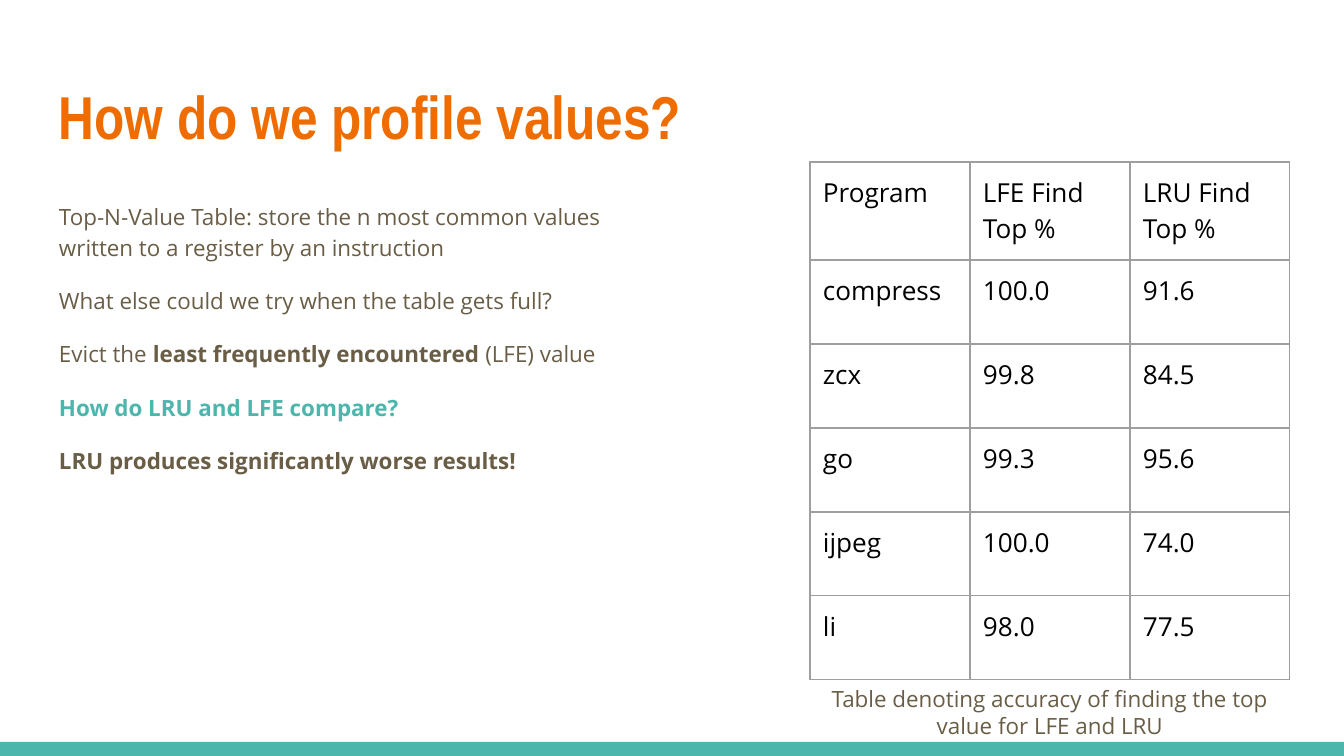
from dataclasses import dataclass

from lxml.etree import SubElement
from pptx import Presentation
from pptx.dml.color import RGBColor
from pptx.enum.shapes import MSO_SHAPE
from pptx.enum.text import MSO_ANCHOR, PP_ALIGN
from pptx.oxml.ns import qn
from pptx.util import Emu, Pt

SLIDE_WIDTH, SLIDE_HEIGHT = 1344, 756
EMU_PER_PX = 9144000 / SLIDE_WIDTH
INSET = 13

ORANGE = RGBColor(0xEF, 0x6C, 0x00)
TEAL = RGBColor(0x4D, 0xB6, 0xAC)
BROWN = RGBColor(0x69, 0x5D, 0x46)
BLACK = RGBColor(0x00, 0x00, 0x00)
GREY = RGBColor(0x9E, 0x9E, 0x9E)


def px(length: int) -> Emu:
    return Emu(round(length * EMU_PER_PX))


@dataclass(frozen=True)
class Box:
    left: int
    top: int
    width: int
    height: int

    def emu(self) -> tuple:
        return px(self.left), px(self.top), px(self.width), px(self.height)


@dataclass(frozen=True)
class Words:
    text: str
    size: float = 12
    color: RGBColor = BROWN
    bold: bool = False
    font: str = "Open Sans"


TITLE = [[Words("How do we profile values?", 32.4, ORANGE, True, "Arial Narrow")]]
POINTS = [
    [Words("Top-N-Value Table: store the n most common values written to a register by an instruction")],
    [Words("What else could we try when the table gets full?")],
    [Words("Evict the "), Words("least frequently encountered", bold=True), Words(" (LFE) value")],
    [Words("How do LRU and LFE compare?", color=TEAL, bold=True)],
    [Words("LRU produces significantly worse results!", bold=True)],
]
CAPTION = [[Words("Table denoting accuracy of finding the top value for LFE and LRU")]]
ACCURACY = [
    ("Program", "LFE Find Top %", "LRU Find Top %"),
    ("compress", "100.0", "91.6"),
    ("zcx", "99.8", "84.5"),
    ("go", "99.3", "95.6"),
    ("ijpeg", "100.0", "74.0"),
    ("li", "98.0", "77.5"),
]
COLUMN_WIDTH, HEADER_HEIGHT, ROW_HEIGHT = 160, 98, 84


def add_words(paragraph, words: Words) -> None:
    run = paragraph.add_run()
    run.text = words.text
    run.font.name = words.font
    run.font.size = Pt(words.size)
    run.font.bold = words.bold
    run.font.color.rgb = words.color


def set_insets(holder) -> None:
    holder.margin_left = holder.margin_right = px(INSET)
    holder.margin_top = holder.margin_bottom = px(INSET)


def add_text(slide, box: Box, paragraphs: list, spacing: float = 1.0, gap: int = 0,
             align=PP_ALIGN.LEFT, anchor=MSO_ANCHOR.TOP) -> None:
    frame = slide.shapes.add_textbox(*box.emu()).text_frame
    frame.word_wrap = True
    frame.vertical_anchor = anchor
    set_insets(frame)
    for index, pieces in enumerate(paragraphs):
        paragraph = frame.add_paragraph() if index else frame.paragraphs[0]
        paragraph.alignment = align
        paragraph.line_spacing = spacing
        paragraph.space_before = Pt(gap if index else 0)
        for words in pieces:
            add_words(paragraph, words)


def add_borders(cell) -> None:
    properties = cell._tc.get_or_add_tcPr()
    for side in ("lnL", "lnR", "lnT", "lnB"):
        line = SubElement(properties, qn(f"a:{side}"), w=str(Pt(0.75)))
        fill = SubElement(line, qn("a:solidFill"))
        SubElement(fill, qn("a:srgbClr"), val=str(GREY))


def add_accuracy_table(slide, left: int, top: int) -> None:
    rows, columns = len(ACCURACY), len(ACCURACY[0])
    box = Box(left, top, columns * COLUMN_WIDTH, HEADER_HEIGHT + (rows - 1) * ROW_HEIGHT)
    table = slide.shapes.add_table(rows, columns, *box.emu()).table
    table.first_row = table.horz_banding = False
    for column in table.columns:
        column.width = px(COLUMN_WIDTH)
    for index, values in enumerate(ACCURACY):
        table.rows[index].height = px(ROW_HEIGHT if index else HEADER_HEIGHT)
        for cell, value in zip(table.rows[index].cells, values):
            set_insets(cell)
            add_borders(cell)
            cell.fill.background()
            add_words(cell.text_frame.paragraphs[0], Words(value, 14, BLACK))


def add_bar(slide, box: Box) -> None:
    bar = slide.shapes.add_shape(MSO_SHAPE.RECTANGLE, *box.emu())
    bar.shadow.inherit = False
    bar.fill.solid()
    bar.fill.fore_color.rgb = TEAL
    bar.line.fill.background()


def main() -> None:
    presentation = Presentation()
    presentation.slide_width = px(SLIDE_WIDTH)
    presentation.slide_height = px(SLIDE_HEIGHT)
    slide = presentation.slides.add_slide(presentation.slide_layouts[6])
    add_bar(slide, Box(0, 742, SLIDE_WIDTH, 14))
    add_text(slide, Box(46, 63, 1252, 104), TITLE, anchor=MSO_ANCHOR.MIDDLE)
    add_text(slide, Box(46, 186, 626, 485), POINTS, spacing=1.15, gap=12)
    add_accuracy_table(slide, 810, 162)
    add_text(slide, Box(810, 672, 480, 40), CAPTION, align=PP_ALIGN.CENTER)
    presentation.save("out.pptx")


if __name__ == "__main__":
    main()
